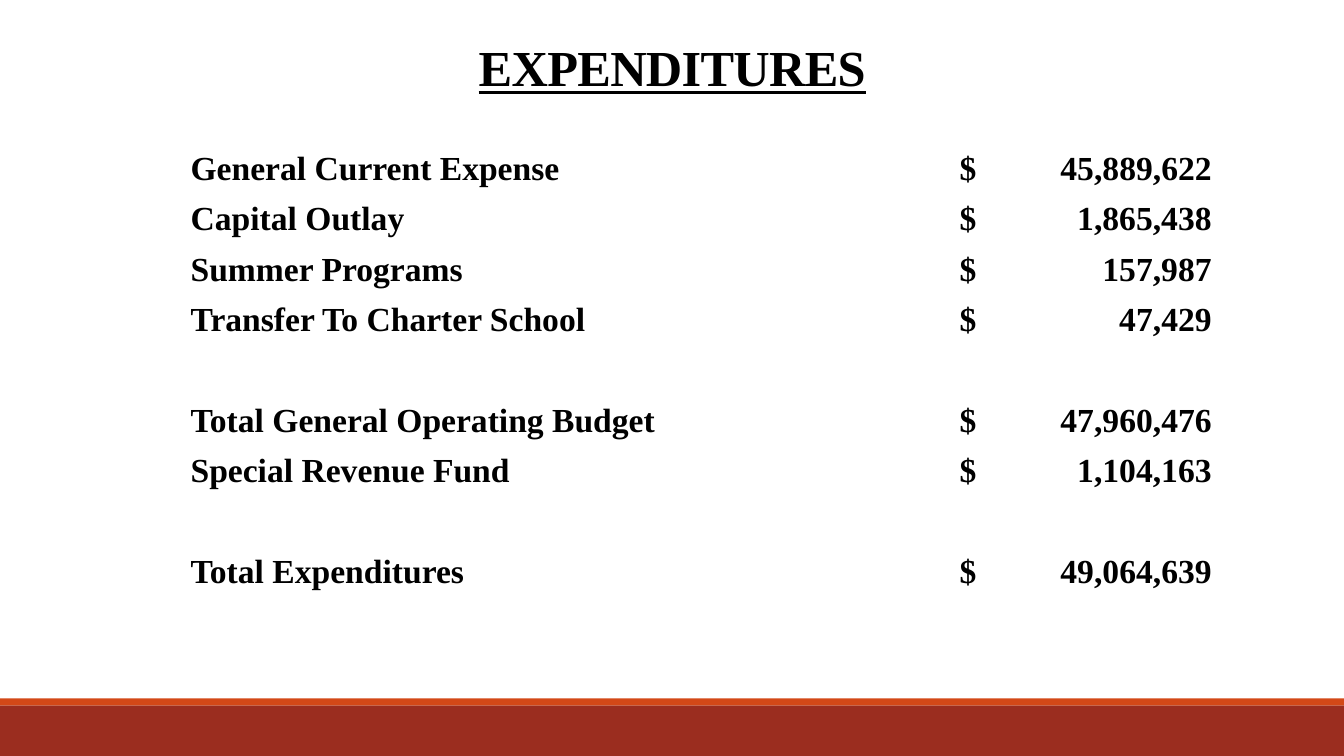
import pptx
import pptx.util
import pptx.dml.color
import pptx.enum.shapes
import pptx.enum.text
import pptx.oxml
import pptx.oxml.ns
from dataclasses import dataclass

Cm, Pt = pptx.util.Cm, pptx.util.Pt
RGB = pptx.dml.color.RGBColor


@dataclass(frozen=True)
class Theme:
    font: str = "Times New Roman"
    text: str = "000000"
    band: str = "9B2D1F"
    stripe: str = "D34817"
    title_size: int = 36
    body_size: int = 24


THEME = Theme()
EXPENDITURES = [
    ("General Current Expense", "45,889,622"),
    ("Capital Outlay", "1,865,438"),
    ("Summer Programs", "157,987"),
    ("Transfer To Charter School", "47,429"),
    None,
    ("Total General Operating Budget", "47,960,476"),
    ("Special Revenue Fund", "1,104,163"),
    None,
    ("Total Expenditures", "49,064,639"),
]


def add_run(p, text, size, **extra):
    r = p.add_run()
    r.text = text
    formats = {"name": THEME.font, "size": Pt(size), "bold": True, **extra}
    for key, value in formats.items():
        setattr(r.font, key, value)
    r.font.color.rgb = RGB.from_string(THEME.text)
    return r


def add_footer(s, left, top, width, height):
    stripe_height = 0.18
    bars = [
        (top, stripe_height, THEME.stripe),
        (top + stripe_height, height - stripe_height, THEME.band),
    ]
    for y, h, color in bars:
        sp = s.shapes.add_shape(
            pptx.enum.shapes.MSO_SHAPE.RECTANGLE, Cm(left), Cm(y), Cm(width), Cm(h)
        )
        sp.shadow.inherit = False
        sp.fill.solid()
        sp.fill.fore_color.rgb = RGB.from_string(color)
        sp.line.fill.background()


def add_title(s, left, top, width, height, text):
    sp = s.shapes.add_textbox(Cm(left), Cm(top), Cm(width), Cm(height))
    tf = sp.text_frame
    tf.word_wrap = False
    tf.vertical_anchor = pptx.enum.text.MSO_ANCHOR.BOTTOM
    p = tf.paragraphs[0]
    p.alignment = pptx.enum.text.PP_ALIGN.CENTER
    p.line_spacing = 0.85
    r = add_run(p, text, THEME.title_size, underline=True)
    r.font._element.set("spc", "-50")


def add_right_tab(p, position):
    tabs = pptx.oxml.parse_xml(
        f"<a:tabLst {pptx.oxml.ns.nsdecls('a')}>"
        f'<a:tab pos="{Cm(position)}" algn="r"/></a:tabLst>'
    )
    p._p.get_or_add_pPr().append(tabs)


def add_budget_table(s, left, top, width, height, rows):
    amount_width, amount_tab = 7.87, 6.35
    table = s.shapes.add_table(
        len(rows), 2, Cm(left), Cm(top), Cm(width), Cm(height)
    ).table
    for key in ("first_row", "horz_banding"):
        setattr(table, key, False)
    for column, w in zip(table.columns, (width - amount_width, amount_width)):
        column.width = Cm(w)
    for row, entry in zip(table.rows, rows):
        row.height = Cm(height / len(rows))
        for cell in row.cells:
            cell.fill.background()
        if entry is None:
            for cell in row.cells:
                cell.text_frame.paragraphs[0].font.size = Pt(THEME.body_size)
            continue
        label, amount = (cell.text_frame.paragraphs[0] for cell in row.cells)
        add_run(label, entry[0], THEME.body_size)
        add_right_tab(amount, amount_tab)
        add_run(amount, f"$\t{entry[1]}", THEME.body_size)


def add_expenditures_slide(prs):
    s = prs.slides.add_slide(prs.slide_layouts[6])
    add_footer(s, 0, 17.6, 33.87, 1.45)
    add_title(s, 11.81, 0.18, 10.26, 2.39, "EXPENDITURES")
    add_budget_table(s, 4.55, 3.66, 27.25, 11.43, EXPENDITURES)


def main():
    prs = pptx.Presentation()
    prs.slide_width, prs.slide_height = Cm(33.87), Cm(19.05)
    add_expenditures_slide(prs)
    prs.save("out.pptx")


if __name__ == "__main__":
    main()
